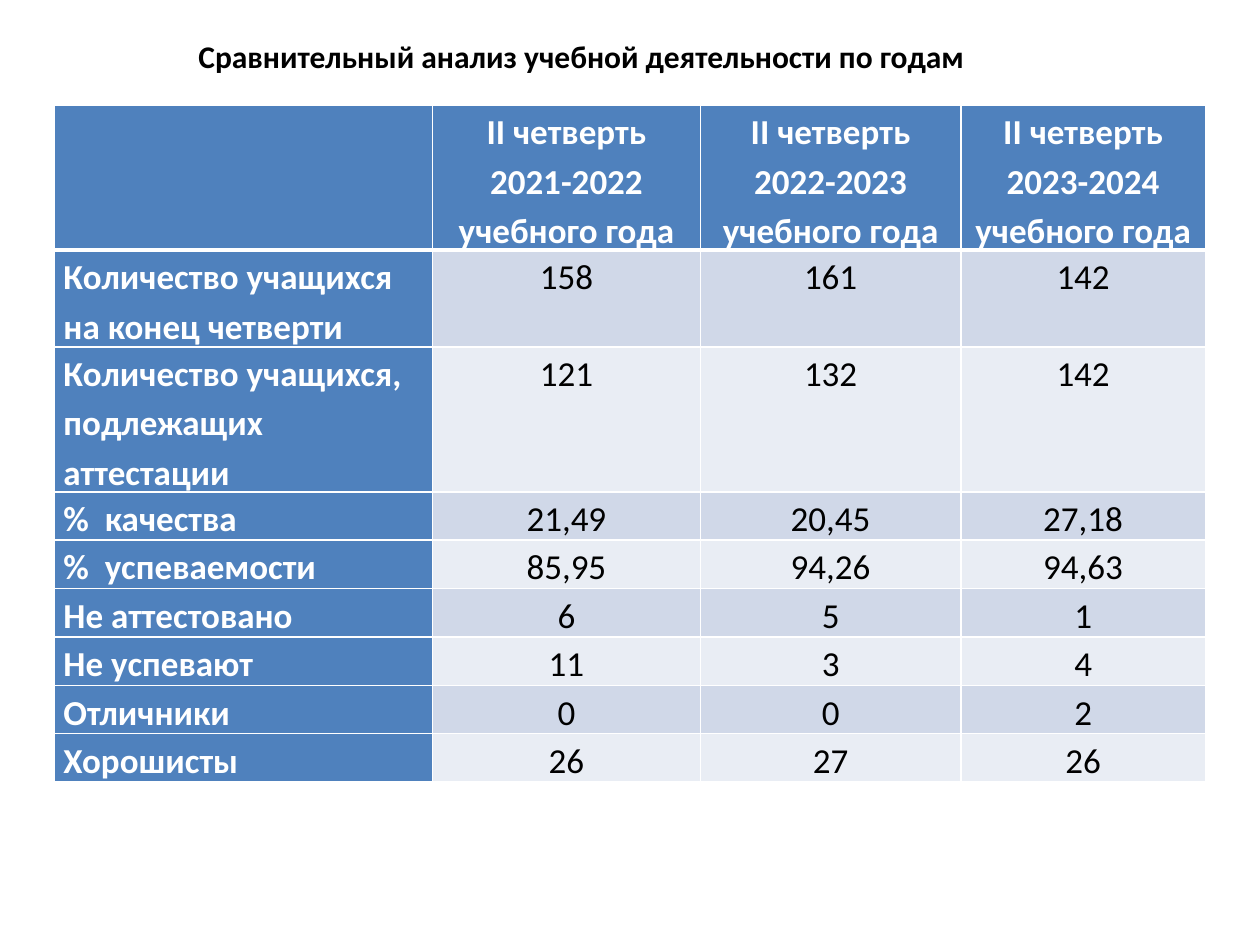
from lxml import etree
from pptx import Presentation
from pptx import util as u
from pptx.dml.color import RGBColor
from pptx.enum import text
from pptx.oxml.ns import qn

# Content
TITLE = "Сравнительный анализ учебной деятельности по годам"
HEADER = [
    "",
    "II четверть\n2021-2022 учебного года",
    "II четверть\n2022-2023\nучебного года",
    "II четверть\n2023-2024\nучебного года",
]
ROWS = [
    ("Количество учащихся на конец четверти", "158", "161", "142"),
    ("Количество учащихся,\nподлежащих аттестации", "121", "132", "142"),
    ("%  качества", "21,49", "20,45", "27,18"),
    ("%  успеваемости", "85,95", "94,26", "94,63"),
    ("Не аттестовано", "6", "5", "1"),
    ("Не успевают", "11", "3", "4"),
    ("Отличники", "0", "0", "2"),
    ("Хорошисты", "26", "27", "26"),
]

# Style and layout
FONT = "Calibri"
ACCENT, WHITE, BLACK = "4F81BD", "FFFFFF", "000000"
BANDS = ("D0D8E8", "E9EDF4")
COL_WIDTHS = (7.62, 5.4, 5.25, 4.93)
ROW_LINES = (3, 2, 3, 1, 1, 1, 1, 1, 1)
LINE_HEIGHT = 0.97


def rgb(value):
    return RGBColor.from_string(value)


def style(p, size, color, bold):
    f = p.font
    f.name, f.size, f.bold = FONT, u.Pt(size), bold
    f.color.rgb = rgb(color)


def set_borders(cell, bottom):
    """Draw white rules; they must precede the cell fill in the XML."""
    tc_pr = cell._tc.get_or_add_tcPr()
    for side in ("L", "R", "T", "B"):
        width = u.Pt(bottom if side == "B" else 1)
        ln = etree.SubElement(tc_pr, qn(f"a:ln{side}"), w=str(int(width)))
        fill = etree.SubElement(ln, qn("a:solidFill"))
        etree.SubElement(fill, qn("a:srgbClr"), val=WHITE)


def fill_cell(cell, content, row, col):
    is_heading = row == 0 or col == 0
    set_borders(cell, 3 if row == 0 else 1)
    cell.fill.solid()
    cell.fill.fore_color.rgb = rgb(ACCENT if is_heading else BANDS[(row - 1) % 2])
    cell.margin_left = cell.margin_right = u.Cm(0.18)
    cell.margin_top = cell.margin_bottom = 0
    cell.text = content
    for p in cell.text_frame.paragraphs:
        p.line_spacing = 1.15
        p.alignment = text.PP_ALIGN.CENTER if col else text.PP_ALIGN.LEFT
        style(p, 20, WHITE if is_heading else BLACK, is_heading)


prs = Presentation()
prs.slide_width, prs.slide_height = u.Cm(25.4), u.Cm(19.05)
s = prs.slides.add_slide(prs.slide_layouts[6])

# Title
sp = s.shapes.add_textbox(u.Cm(3.6), u.Cm(0.62), u.Cm(19), u.Cm(1.02))
tf = sp.text_frame
tf.word_wrap = True
tf.margin_left = u.Cm(0.4)
tf.text = TITLE
style(tf.paragraphs[0], 18, BLACK, True)

# Results table
grid = [HEADER, *ROWS]
table = s.shapes.add_table(
    len(grid), len(HEADER), u.Cm(1.1), u.Cm(2.12),
    u.Cm(sum(COL_WIDTHS)), u.Cm(sum(ROW_LINES) * LINE_HEIGHT),
).table
for column, width in zip(table.columns, COL_WIDTHS):
    column.width = u.Cm(width)
for row, lines in zip(table.rows, ROW_LINES):
    row.height = u.Cm(lines * LINE_HEIGHT)
for r, values in enumerate(grid):
    for c, value in enumerate(values):
        fill_cell(table.cell(r, c), value, r, c)

prs.save("out.pptx")
